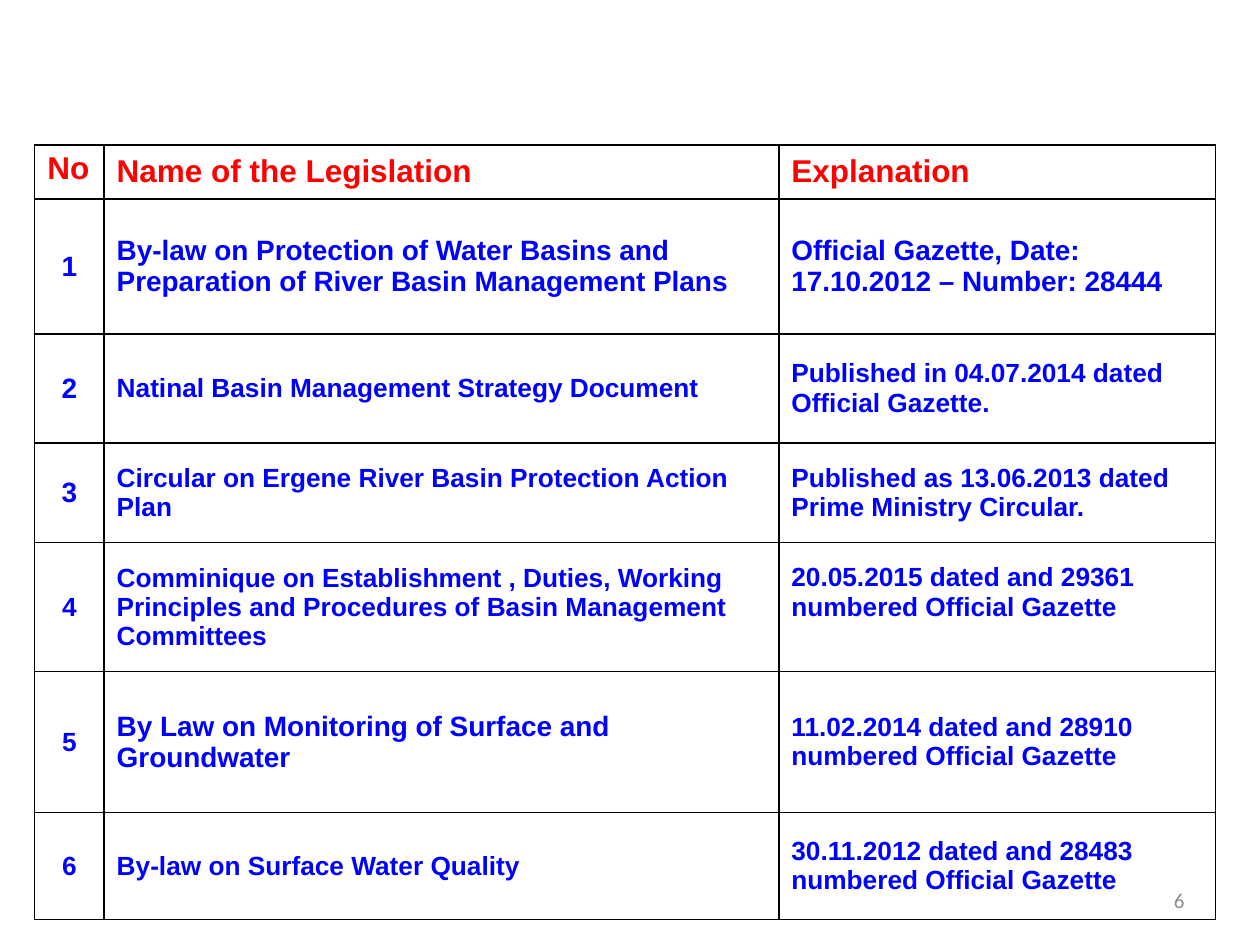
"""Build a slide with a table of water basin legislation."""
import lxml.etree
import pptx
import pptx.dml.color
import pptx.enum.text
import pptx.oxml.ns
import pptx.util

Cm = pptx.util.Cm
Pt = pptx.util.Pt
ALIGN = pptx.enum.text.PP_ALIGN
ANCHOR = pptx.enum.text.MSO_ANCHOR

COLORS = {"head": "FF0000", "body": "0000FF", "page": "8C8C8C", "line": "000000"}
HEADS = ["No", "Name of the Legislation", "Explanation"]
LAWS = [
    ("By-law on Protection of Water Basins and Preparation of River Basin Management Plans",
     "Official Gazette, Date: 17.10.2012 – Number: 28444"),
    ("Natinal Basin Management Strategy Document",
     "Published in 04.07.2014 dated Official Gazette."),
    ("Circular on Ergene River Basin Protection Action Plan",
     "Published as 13.06.2013 dated Prime Ministry Circular."),
    ("Comminique on Establishment , Duties, Working Principles and Procedures "
     "of Basin Management Committees",
     "20.05.2015 dated and 29361 numbered Official Gazette"),
    ("By Law on Monitoring of Surface and Groundwater",
     "11.02.2014 dated and 28910 numbered Official Gazette"),
    ("By-law on Surface Water Quality",
     "30.11.2012 dated and 28483 numbered Official Gazette"),
]
SIZES = [(18, 18, 18), (16, 16, 16), (16, 15, 15), (16, 15, 15),
         (15, 15, 15), (15, 16, 15), (15, 15, 15)]
WIDTHS = [1.4, 13.6, 8.8]
HEIGHTS = [1.09, 2.72, 2.2, 2.01, 2.6, 2.84, 2.16]
LEFT, TOP = 0.7, 2.92


def write(frame, text, color, align, **style):
    part = frame.paragraphs[0]
    part.alignment = align
    run = part.add_run()
    run.text = text
    for key, value in style.items():
        setattr(run.font, key, value)
    run.font.color.rgb = pptx.dml.color.RGBColor.from_string(COLORS[color])


def border(cell):
    props = cell._tc.get_or_add_tcPr()
    for spot, side in enumerate(("lnL", "lnR", "lnT", "lnB")):
        line = lxml.etree.Element(pptx.oxml.ns.qn(f"a:{side}"), w=str(Pt(1)))
        fill = lxml.etree.SubElement(line, pptx.oxml.ns.qn("a:solidFill"))
        lxml.etree.SubElement(fill, pptx.oxml.ns.qn("a:srgbClr"), val=COLORS["line"])
        props.insert(spot, line)


def add_page(slide):
    frame = slide.shapes.add_textbox(Cm(18.2), Cm(17.65), Cm(5.93), Cm(1.01)).text_frame
    frame.word_wrap = True
    frame.vertical_anchor = ANCHOR.MIDDLE
    write(frame, "6", "page", ALIGN.RIGHT, name="Calibri", size=Pt(12))


def add_laws(slide):
    rows = [HEADS] + [(str(num), *law) for num, law in enumerate(LAWS, 1)]
    table = slide.shapes.add_table(len(rows), len(HEADS), Cm(LEFT), Cm(TOP),
                                   Cm(sum(WIDTHS)), Cm(sum(HEIGHTS))).table
    table.first_row = table.horz_banding = False
    for col, width in zip(table.columns, WIDTHS):
        col.width = Cm(width)
    for row, height in zip(table.rows, HEIGHTS):
        row.height = Cm(height)
    for i, texts in enumerate(rows):
        for j, text in enumerate(texts):
            cell = table.cell(i, j)
            cell.fill.background()
            border(cell)
            cell.vertical_anchor = ANCHOR.MIDDLE if i or j else ANCHOR.TOP
            align = ALIGN.CENTER if i and not j else ALIGN.LEFT
            write(cell.text_frame, text, "body" if i else "head", align,
                  name="Arial", size=Pt(SIZES[i][j]), bold=True)
    table.cell(4, 2).margin_bottom = Cm(0.72)


def main():
    deck = pptx.Presentation()
    deck.slide_width, deck.slide_height = Cm(25.4), Cm(19.05)
    slide = deck.slides.add_slide(deck.slide_layouts[6])
    add_page(slide)
    add_laws(slide)
    deck.save("out.pptx")


if __name__ == "__main__":
    main()
